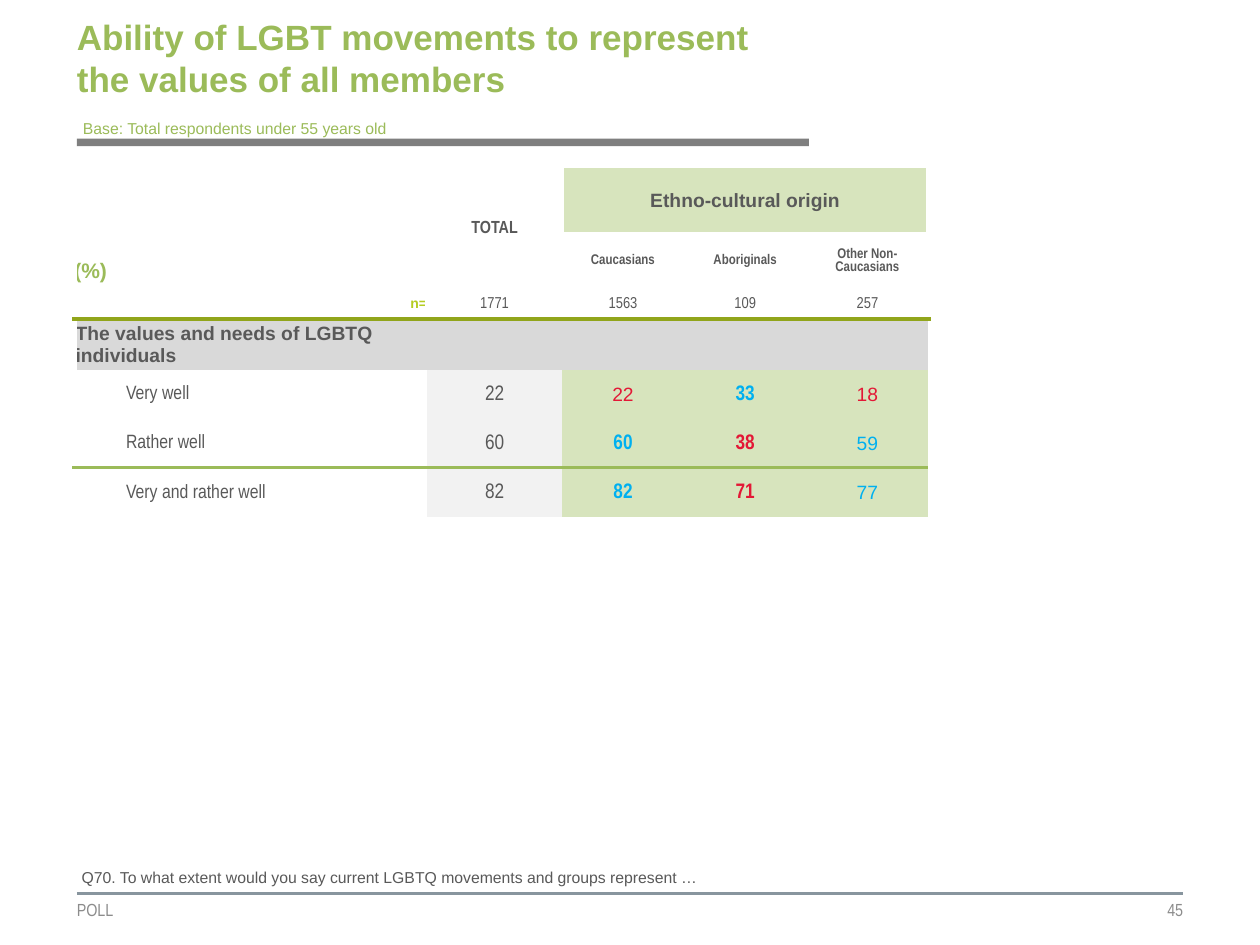
from lxml import etree
from pptx import Presentation
from pptx.dml.color import RGBColor
from pptx.enum.shapes import MSO_CONNECTOR, MSO_SHAPE
from pptx.enum.text import MSO_ANCHOR, PP_ALIGN
from pptx.oxml.ns import qn
from pptx.util import Inches, Pt

LEFT, CENTER, RIGHT = PP_ALIGN.LEFT, PP_ALIGN.CENTER, PP_ALIGN.RIGHT
MIDDLE, BOTTOM, TOP = MSO_ANCHOR.MIDDLE, MSO_ANCHOR.BOTTOM, MSO_ANCHOR.TOP
ARIAL, NARROW = "Arial", "Arial Narrow"

WIDTH, HEIGHT, MARGIN = 10, 7.5, 0.61
FOOT_Y = 7.09
GREEN, OLIVE, LIME, PALE = "9BBB59", "91A51B", "B5CC22", "D7E4BD"
TEXT, GREY, WHITE = "595959", "8C8C8C", "FFFFFF"
RED, BLUE = "E31836", "00B0F0"

COLS = [2.8, 1.07, 0.97, 0.97, 0.97]
ROWS = [0.32, 0.18, 0.45, 0.24, 0.4, 0.39, 0.39, 0.39]
HEADER_ROWS, SECTION_ROW, FIRST_ANSWER = 4, 4, 5
GROUPS = ["Caucasians", "Aboriginals", "Other Non-Caucasians"]
BASES = ["1771", "1563", "109", "257"]
# label, total, then (value, colour, bold) for each group
ANSWERS = [
    ("Very well", "22", [("22", RED, False), ("33", BLUE, True), ("18", RED, False)]),
    ("Rather well", "60", [("60", BLUE, True), ("38", RED, True), ("59", BLUE, False)]),
    ("Very and rather well", "82",
     [("82", BLUE, True), ("71", RED, True), ("77", BLUE, False)]),
]


def rgb(code):
    return RGBColor.from_string(code)


def write(tf, text, size, font=ARIAL, color=TEXT, bold=False, align=LEFT):
    tf.text = text
    p = tf.paragraphs[0]
    p.alignment = align
    for r in p.runs:
        r.font.size, r.font.name, r.font.bold = Pt(size), font, bold
        r.font.color.rgb = rgb(color)
    return p


def set_insets(box, left, top, right, bottom):
    box.margin_left, box.margin_top = Inches(left), Inches(top)
    box.margin_right, box.margin_bottom = Inches(right), Inches(bottom)


def add_text(s, x, y, w, h, text, size, anchor=TOP, inset=None, wrap=True, **style):
    tf = s.shapes.add_textbox(Inches(x), Inches(y), Inches(w), Inches(h)).text_frame
    tf.word_wrap, tf.vertical_anchor = wrap, anchor
    if inset is not None:
        set_insets(tf, *[inset] * 4)
    write(tf, text, size, **style)


def add_title(s):
    title = s.shapes.title
    title.left, title.top = Inches(MARGIN), Inches(0.11)
    title.width, title.height = Inches(5.57), Inches(0.69)
    tf = title.text_frame
    tf.word_wrap, tf.vertical_anchor = True, MIDDLE
    set_insets(tf, 0, 0, 0, 0)
    write(tf, "Ability of LGBT movements to represent the values of all members",
          20, color=GREEN, bold=True)


def add_title_bar(s):
    bar = s.shapes.add_shape(MSO_SHAPE.RECTANGLE, Inches(MARGIN), Inches(1.1),
                             Inches(5.81), Inches(0.06))
    bar.shadow.inherit = False
    bar.fill.solid()
    bar.fill.fore_color.rgb = rgb("7F7F7F")
    bar.line.fill.background()


def add_footer_line(s):
    line = s.shapes.add_connector(MSO_CONNECTOR.STRAIGHT, Inches(MARGIN), Inches(FOOT_Y),
                                  Inches(WIDTH - MARGIN), Inches(FOOT_Y))
    line.line.color.rgb = rgb("88959E")
    line.line.width = Pt(1.5)
    etree.SubElement(line._element.spPr, qn("a:effectLst"))


def set_borders(cell, borders):
    """Draw the given {side: (colour, points)} and clear the other sides."""
    tcPr = cell._tc.get_or_add_tcPr()
    for side in "LRTB":
        ln = etree.SubElement(tcPr, qn(f"a:ln{side}"))
        if side in borders:
            color, points = borders[side]
            ln.set("w", str(Pt(points)))
            fill = etree.SubElement(ln, qn("a:solidFill"))
            etree.SubElement(fill, qn("a:srgbClr")).set("val", color)
        else:
            etree.SubElement(ln, qn("a:noFill"))


def borders_at(row, col):
    borders = {}
    if row < HEADER_ROWS:
        borders.update(L=(WHITE, 3), R=(WHITE, 3))
    elif col == 0:
        borders["L"] = (WHITE, 3)
    for above, line in ((HEADER_ROWS - 1, (OLIVE, 3)), (len(ROWS) - 2, (GREEN, 2.25))):
        if row == above:
            borders["B"] = line
        elif row == above + 1:
            borders["T"] = line
    return borders


def fill_at(row, col):
    if row == SECTION_ROW:
        return "D9D9D9"
    if row >= FIRST_ANSWER and col > 0:
        return "F2F2F2" if col == 1 else PALE
    return PALE if row < 2 and col >= 2 else None


def format_cell(cell, row, col):
    set_borders(cell, borders_at(row, col))
    color = fill_at(row, col)
    if color:
        cell.fill.solid()
        cell.fill.fore_color.rgb = rgb(color)
    else:
        cell.fill.background()
    cell.vertical_anchor = MIDDLE
    set_insets(cell, 0.01, 0.01, 0.01, 0)
    # keeps empty cells from stretching their row
    end = etree.SubElement(cell.text_frame.paragraphs[0]._p, qn("a:endParaRPr"))
    end.set("sz", "800")


def fill_header(table):
    for first, last in (((0, 1), (2, 1)), ((0, 2), (1, 4)), ((1, 0), (2, 0))):
        table.cell(*first).merge(table.cell(*last))
    write(table.cell(0, 1).text_frame, "TOTAL", 10, NARROW, bold=True, align=CENTER)
    write(table.cell(0, 2).text_frame, "Ethno-cultural origin", 11, bold=True, align=CENTER)
    labels = ((1, "(%)", 12, GREEN, LEFT, BOTTOM), (3, "n=", 8, LIME, RIGHT, MIDDLE))
    for row, text, size, color, align, anchor in labels:
        cell = table.cell(row, 0)
        set_insets(cell, 0, 0.05, 0, 0.05)
        cell.vertical_anchor = anchor
        p = write(cell.text_frame, text, size, color=color, bold=True, align=align)
        p.line_spacing = 0.95
    for col, group in enumerate(GROUPS, 2):
        write(table.cell(2, col).text_frame, group, 8, NARROW, bold=True, align=CENTER)
    for col, base in enumerate(BASES, 1):
        write(table.cell(3, col).text_frame, base, 9, NARROW, align=CENTER)


def fill_answers(table):
    write(table.cell(SECTION_ROW, 0).text_frame,
          "The values and needs of LGBTQ individuals", 11, bold=True)
    for row, (label, total, values) in enumerate(ANSWERS, FIRST_ANSWER):
        p = write(table.cell(row, 0).text_frame, label, 11, NARROW)
        p._p.get_or_add_pPr().set("marL", str(Inches(0.4)))
        write(table.cell(row, 1).text_frame, total, 12, NARROW, align=CENTER)
        for col, (value, color, bold) in enumerate(values, 2):
            size, font = (12, NARROW) if bold else (11, ARIAL)
            write(table.cell(row, col).text_frame, value, size, font, color, bold, CENTER)


def add_results_table(s):
    frame = s.shapes.add_table(len(ROWS), len(COLS), Inches(0.59), Inches(1.33),
                               Inches(sum(COLS)), Inches(sum(ROWS)))
    table = frame.table
    table.first_row = table.horz_banding = False
    for col, width in enumerate(COLS):
        table.columns[col].width = Inches(width)
    for row, height in enumerate(ROWS):
        table.rows[row].height = Inches(height)
        for col in range(len(COLS)):
            format_cell(table.cell(row, col), row, col)
    fill_header(table)
    fill_answers(table)


def main():
    prs = Presentation()
    prs.slide_width, prs.slide_height = Inches(WIDTH), Inches(HEIGHT)
    s = prs.slides.add_slide(prs.slide_layouts[5])
    add_footer_line(s)
    add_title_bar(s)
    footer = dict(anchor=MIDDLE, inset=0, font=NARROW, color=GREY)
    add_text(s, MARGIN, FOOT_Y, 2.8, 0.26, "POLL", 10, **footer)
    add_text(s, 6.55, FOOT_Y, 2.84, 0.26, "45", 10, align=RIGHT, **footer)
    add_results_table(s)
    add_text(s, 0.55, 6.84, 8.55, 0.25, "Q70. To what extent would you say current "
             "LGBTQ movements and groups represent …", 9)
    add_text(s, 0.56, 0.89, 2.65, 0.25, "Base: Total respondents under 55 years old",
             9, wrap=False, color=GREEN)
    add_title(s)
    prs.save("out.pptx")


if __name__ == "__main__":
    main()
